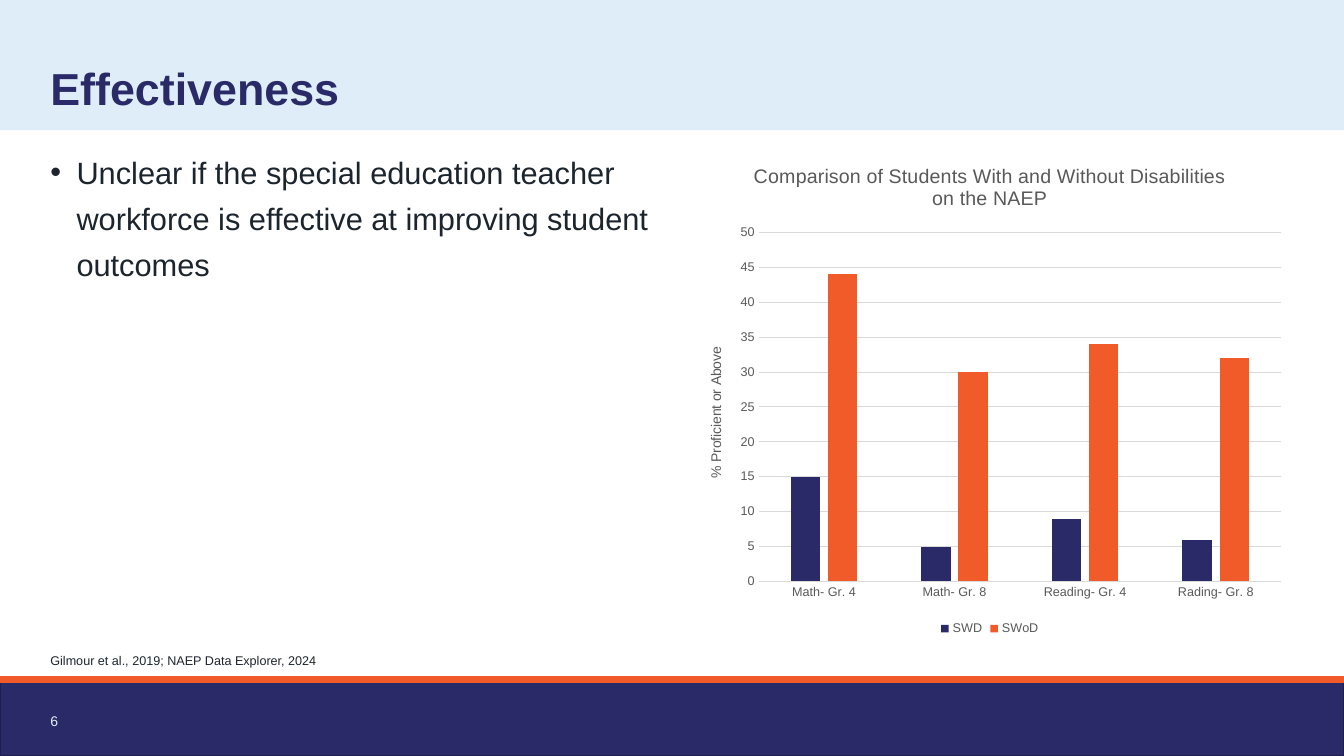
from lxml import etree
from pptx import Presentation
from pptx.chart.data import CategoryChartData
from pptx.dml.color import RGBColor
from pptx.enum.chart import XL_CHART_TYPE, XL_LEGEND_POSITION, XL_TICK_MARK
from pptx.enum.shapes import MSO_CONNECTOR, MSO_SHAPE
from pptx.enum.text import MSO_ANCHOR, PP_ALIGN
from pptx.oxml.ns import qn
from pptx.util import Cm, Pt

HUES = {"navy": "292A67", "edge": "1E1F4C", "pale": "DFEDF9",
        "orange": "F15A29", "ink": "1C252D", "gray": "595959",
        "grid": "D9D9D9"}
WIDE, HIGH, LEFT = 33.87, 19.05, 1.27
FOOT = 17.12


def hue(name):
    return RGBColor.from_string(HUES[name])


def style(font, size, name, bold=False):
    font.name, font.size, font.bold = "Arial", Pt(size), bold
    font.color.rgb = hue(name)


deck = Presentation()
deck.slide_width, deck.slide_height = Cm(WIDE), Cm(HIGH)
slide = deck.slides.add_slide(deck.slide_layouts[5])
shapes = slide.shapes
title = shapes.title

# Header and footer bands
for top, tall, fill in ((FOOT, HIGH - FOOT, "navy"), (0, 3.28, "pale")):
    band = shapes.add_shape(MSO_SHAPE.RECTANGLE, Cm(0), Cm(top), Cm(WIDE), Cm(tall))
    band.shadow.inherit = False
    band.fill.solid()
    band.fill.fore_color.rgb = hue(fill)
    if fill == "navy":
        band.line.color.rgb = hue("edge")
        band.line.width = Pt(1)
    else:
        band.line.fill.background()

rule = shapes.add_connector(MSO_CONNECTOR.STRAIGHT, Cm(0), Cm(FOOT), Cm(WIDE), Cm(FOOT))
rule.line.color.rgb = hue("orange")
rule.line.width = Pt(4.5)
etree.SubElement(rule._element.spPr, qn("a:effectLst"))

# Title, brought in front of the header band
shapes._spTree.append(title._element)
title.left, title.top, title.width, title.height = Cm(LEFT), Cm(0.3), Cm(31.32), Cm(2.6)
title.text = "Effectiveness"

# Bullet, citation and page number
texts = [
    ("Unclear if the special education teacher workforce is effective "
     "at improving student outcomes", 3.63, 15.29, 12.5, 22, "ink", MSO_ANCHOR.TOP),
    ("Gilmour et al., 2019; NAEP Data Explorer, 2024",
     16.13, 31.32, 0.71, 9, "ink", MSO_ANCHOR.BOTTOM),
    ("6", 17.83, 0.99, 0.56, 10, "pale", MSO_ANCHOR.BOTTOM),
]
boxes = [(title, 32, "navy", MSO_ANCHOR.BOTTOM, 0.9)]
for words, top, wide, tall, size, name, anchor in texts:
    box = shapes.add_textbox(Cm(LEFT), Cm(top), Cm(wide), Cm(tall))
    box.text_frame.text = words
    boxes.append((box, size, name, anchor, 1 if words == "6" else 1.25))

for box, size, name, anchor, gap in boxes:
    frame = box.text_frame
    frame.word_wrap = True
    frame.vertical_anchor = anchor
    frame.margin_left = frame.margin_right = Cm(0)
    frame.margin_top = frame.margin_bottom = Cm(0)
    para = frame.paragraphs[0]
    para.alignment = PP_ALIGN.LEFT
    para.line_spacing = gap
    if size == 22:
        props = para._p.get_or_add_pPr()
        props.set("marL", str(Cm(0.66)))
        props.set("indent", str(Cm(-0.66)))
        etree.SubElement(props, qn("a:buFont")).set("typeface", "Arial")
        etree.SubElement(props, qn("a:buChar")).set("char", "•")
    style(para.font, size, name, box is title)

# Chart
data = CategoryChartData()
data.categories = ["Math- Gr. 4", "Math- Gr. 8", "Reading- Gr. 4", "Rading- Gr. 8"]
data.add_series("SWD", (15, 5, 9, 6))
data.add_series("SWoD", (44, 30, 34, 32))
chart = shapes.add_chart(XL_CHART_TYPE.COLUMN_CLUSTERED, Cm(17.3), Cm(3.63),
                         Cm(15.29), Cm(12.5), data).chart
style(chart.font, 9, "gray")

plot = chart.plots[0]
plot.gap_width, plot.overlap = 219, -27
plot.vary_by_categories = False
for bars, name in zip(plot.series, ("navy", "orange")):
    bars.format.fill.solid()
    bars.format.fill.fore_color.rgb = hue(name)

# Axes
cats, vals = chart.category_axis, chart.value_axis
for axis in (cats, vals):
    axis.major_tick_mark = axis.minor_tick_mark = XL_TICK_MARK.NONE
    style(axis.tick_labels.font, 9, "gray")
vals.minimum_scale, vals.maximum_scale, vals.major_unit = 0, 50, 5
vals.format.line.fill.background()
for line in (cats.format.line, vals.major_gridlines.format.line):
    line.color.rgb = hue("grid")
    line.width = Pt(0.75)

# Chart titles and legend
for part, words, size in (
        (chart, "Comparison of Students With and Without Disabilities on the NAEP", 14),
        (vals, "% Proficient or Above", 10)):
    part.has_title = True
    head = (chart.chart_title if part is chart else vals.axis_title).text_frame
    head.text = words
    style(head.paragraphs[0].font, size, "gray")
chart.has_legend = True
chart.legend.position = XL_LEGEND_POSITION.BOTTOM
chart.legend.include_in_layout = False
style(chart.legend.font, 9, "gray")

deck.save("out.pptx")
